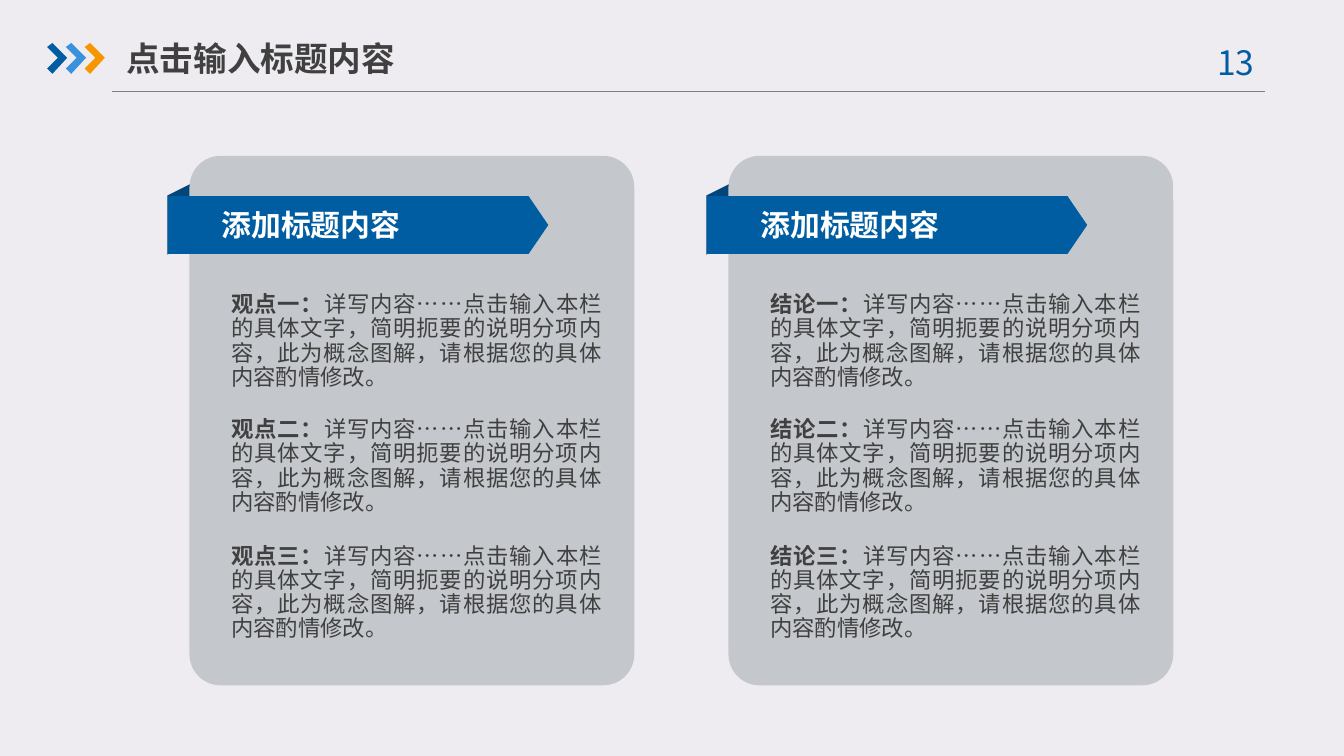
from dataclasses import dataclass

from lxml import etree
from pptx import Presentation
from pptx.dml.color import RGBColor
from pptx.enum import shapes, text
from pptx.oxml import ns
from pptx.util import Inches, Pt


@dataclass(frozen=True)
class Theme:
    font: str = "Noto Sans CJK SC"
    back: str = "EEECF1"
    blue: str = "005DA2"
    sky: str = "3992DB"
    gold: str = "F79600"
    navy: str = "00467A"
    card: str = "C4C7CB"
    ink: str = "404040"
    rule: str = "808080"
    white: str = "FFFFFF"
    title: int = 18
    head: int = 16
    body: int = 12
    lead: int = 13


THEME = Theme()
WIDTH = 10
BODY = "详写内容……点击输入本栏的具体文字，简明扼要的说明分项内容，此为概念图解，请根据您的具体内容酌情修改。"
ROWS = {"一": 2.18, "二": 3.11, "三": 4.05}


def color(code):
    return RGBColor.from_string(code)


def write(para, words, *, size, tint, bold=False):
    """Add one run, with the font set for Latin and Chinese text."""
    run = para.add_run()
    run.text = words
    font = run.font
    font.name, font.size, font.bold = THEME.font, Pt(size), bold
    font.color.rgb = color(tint)
    face = etree.SubElement(run._r.get_or_add_rPr(), ns.qn("a:ea"))
    face.set("typeface", THEME.font)


class Deck:
    def __init__(self, theme):
        self.theme = theme
        self.show = Presentation()
        self.show.slide_width = Inches(WIDTH)
        self.show.slide_height = Inches(WIDTH * 9 / 16)
        self.slide = self.show.slides.add_slide(self.show.slide_layouts[6])
        fill = self.slide.background.fill
        fill.solid()
        fill.fore_color.rgb = color(theme.back)

    def paint(self, shape, tint):
        shape.shadow.inherit = False
        shape.fill.solid()
        shape.fill.fore_color.rgb = color(tint)
        shape.line.fill.background()
        return shape

    def shape(self, kind, box, tint, adjust=None):
        item = self.slide.shapes.add_shape(kind, *map(Inches, box))
        if adjust is not None:
            item.adjustments[0] = adjust
        return self.paint(item, tint)

    def fold(self, box, tint):
        item = self.shape(shapes.MSO_SHAPE.FLOWCHART_DATA, box, tint)
        item.rotation = 270
        item._element.spPr.get_or_add_xfrm().set("flipH", "1")

    def arrow(self, left, top, tint):
        """Draw a chevron that points right."""
        dots = [(0, 0.03), (0.04, 0), (0.15, 0.11), (0.04, 0.23),
                (0, 0.19), (0.08, 0.11)]
        points = [(Inches(left + x), Inches(top + y)) for x, y in dots]
        path = self.slide.shapes.build_freeform(*points[0], scale=1.0)
        path.add_line_segments(points[1:], close=True)
        self.paint(path.convert_to_shape(), tint)

    def line(self, start, end, tint, width):
        item = self.slide.shapes.add_connector(
            shapes.MSO_CONNECTOR.STRAIGHT, *map(Inches, start + end))
        item.line.color.rgb = color(tint)
        item.line.width = Pt(width)
        etree.SubElement(item._element.spPr, ns.qn("a:effectLst"))

    def text(self, box, parts, *, size, tint, inset=(0, 0), align=None,
             lead=None, anchor=text.MSO_ANCHOR.TOP, grow=True):
        """Add a text box; parts holds (words, bold) pairs."""
        frame = self.slide.shapes.add_textbox(*map(Inches, box)).text_frame
        frame.word_wrap = True
        frame.vertical_anchor = anchor
        if grow:
            frame.auto_size = text.MSO_AUTO_SIZE.SHAPE_TO_FIT_TEXT
        frame.margin_left = frame.margin_right = Inches(inset[0])
        frame.margin_top = frame.margin_bottom = Inches(inset[1])
        para = frame.paragraphs[0]
        para.alignment = align
        if lead:
            para.line_spacing = Pt(lead)
        for words, bold in parts:
            write(para, words, size=size, tint=tint, bold=bold)

    def card(self, left, label):
        look, kinds = self.theme, shapes.MSO_SHAPE
        self.fold((left - 0.33, 1.51, 0.55, 0.22), look.navy)
        self.shape(kinds.ROUNDED_RECTANGLE, (left, 1.16, 3.31, 3.94),
                   look.card, 0.07)
        self.shape(kinds.PENTAGON, (left - 0.16, 1.46, 2.83, 0.43),
                   look.blue, 0.34)
        # Body first, then heading, then the rest: one loop keeps the order.
        for number, top in ROWS.items():
            self.text((left + 0.31, top, 2.76, 0.73),
                      [(f"{label}{number}：", True), (BODY, False)],
                      size=look.body, tint=look.ink, lead=look.lead,
                      align=text.PP_ALIGN.JUSTIFY)
            if top == ROWS["一"]:
                self.text((left + 0.24, 1.54, 1.86, 0.27),
                          [("添加标题内容", True)],
                          size=look.head, tint=look.white)


def main():
    deck = Deck(THEME)
    deck.line((0.83, 0.68), (9.41, 0.68), THEME.rule, 0.75)
    for place, tint in enumerate((THEME.blue, THEME.sky, THEME.gold)):
        deck.arrow(0.35 + place * 0.14, 0.32, tint)
    deck.text((8.86, 0.26, 0.73, 0.4), [("13 ", False)], size=THEME.title,
              tint=THEME.blue, inset=(0.1, 0.05), align=text.PP_ALIGN.CENTER)
    deck.text((0.94, 0.22, 2.33, 0.42), [("点击输入标题内容", True)],
              size=THEME.title, tint=THEME.ink, inset=(0, 0.05),
              anchor=text.MSO_ANCHOR.MIDDLE, grow=False)
    for left, label in ((1.41, "观点"), (5.42, "结论")):
        deck.card(left, label)
    deck.show.save("out.pptx")


if __name__ == "__main__":
    main()
